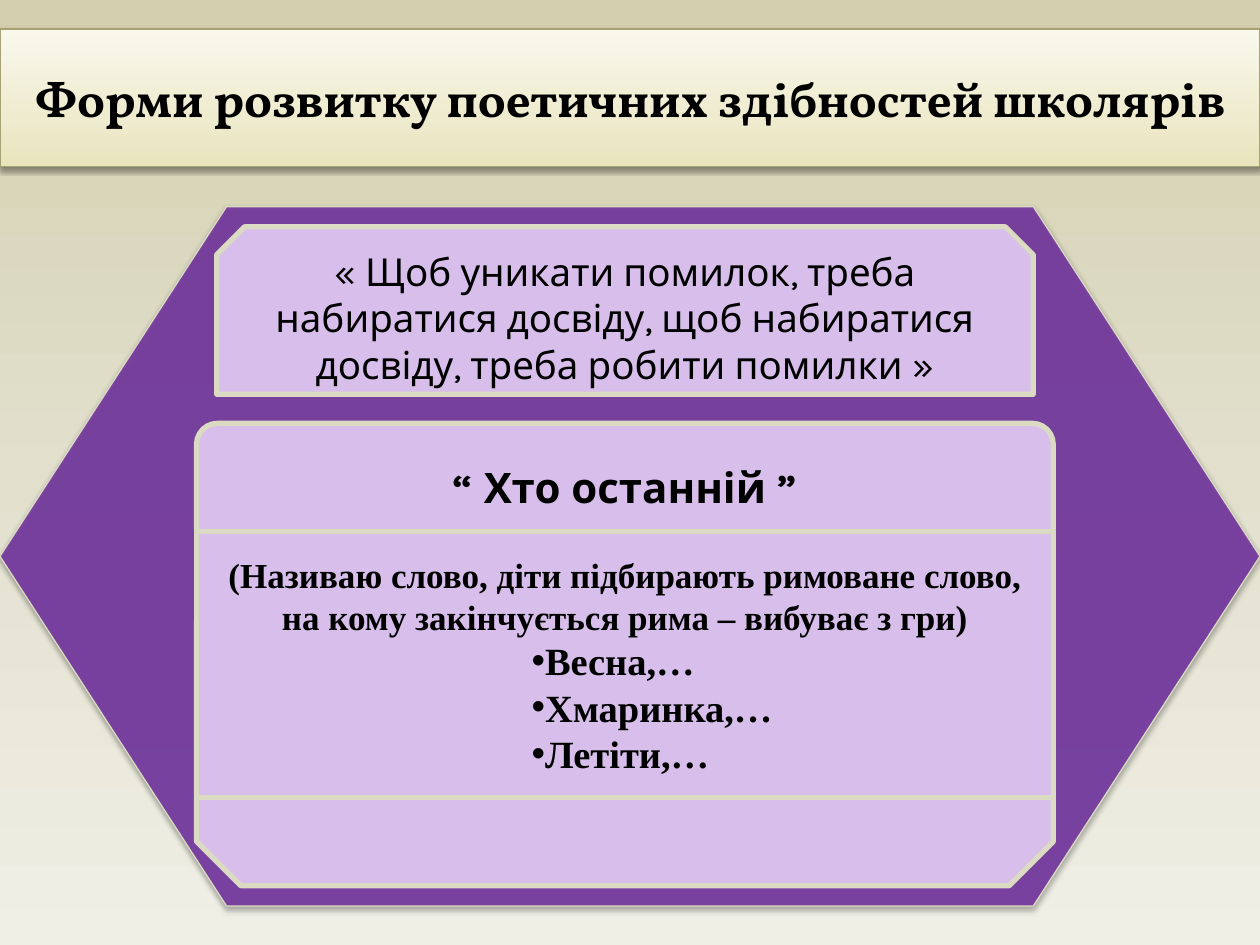
"""Build a slide on ways to develop pupils' poetic abilities."""
from copy import deepcopy
from dataclasses import dataclass

from lxml import etree
from pptx import Presentation
from pptx.dml.color import RGBColor
from pptx.enum.shapes import MSO_SHAPE
from pptx.enum.text import MSO_ANCHOR, MSO_AUTO_SIZE, PP_ALIGN
from pptx.oxml.ns import qn
from pptx.util import Inches, Pt

HEXAGON = MSO_SHAPE.HEXAGON
SNIPPED = MSO_SHAPE.SNIP_2_SAME_RECTANGLE
ROUNDED = MSO_SHAPE.ROUNDED_RECTANGLE
CENTER, LEFT = PP_ALIGN.CENTER, PP_ALIGN.LEFT
MIDDLE = MSO_ANCHOR.MIDDLE
NO_AUTOFIT = MSO_AUTO_SIZE.NONE
LILAC, PURPLE, EDGE, BLACK = "D8BFEB", "7030A0", "DBDAC2", "000000"


@dataclass
class Panel:
    kind: int
    box: tuple[float, float, float, float]
    text: str = ""
    size: int = 0
    bold: bool = False
    rotation: int = 0


PANELS = [
    Panel(SNIPPED, (1.72, 1.8, 6.48, 1.33),
          "« Щоб уникати помилок, треба набиратися досвіду, "
          "щоб набиратися досвіду, треба робити помилки »", 22),
    Panel(ROUNDED, (1.56, 3.36, 6.8, 1), "“ Хто останній ”", 24, bold=True),
    Panel(SNIPPED, (1.56, 4.92, 6.8, 2.11), rotation=180),
]
RULE = ("(Називаю слово, діти підбирають римоване слово, "
        "на кому закінчується рима – вибуває з гри)")
WORDS = ["Весна,…", "Хмаринка,…", "Летіти,…"]


def rgb(value: str) -> RGBColor:
    return RGBColor.from_string(value)


def set_gradient(fill, root, stops: list[tuple[float, str]], angle: int) -> None:
    fill.gradient()
    fill.gradient_angle = angle
    stop_list = root.find(".//" + qn("a:gsLst"))
    stop_list.append(deepcopy(stop_list[-1]))
    for stop, (position, color) in zip(fill.gradient_stops, stops):
        stop.position = position
        stop.color.rgb = rgb(color)


def set_line(sp, color: str, width: float) -> None:
    sp.line.color.rgb = rgb(color)
    sp.line.width = Pt(width)


def add_alpha(parent, percent: int) -> None:
    etree.SubElement(parent, qn("a:alpha"), val=str(percent * 1000))


def add_shadow(sp, opacity: int, distance: float) -> None:
    sp.shadow.inherit = False
    effects = sp._element.spPr.find(qn("a:effectLst"))
    outer = etree.SubElement(effects, qn("a:outerShdw"), blurRad=str(Pt(3.1)),
                             dist=str(Pt(distance)), dir="5400000", rotWithShape="0")
    add_alpha(etree.SubElement(outer, qn("a:srgbClr"), val=BLACK), opacity)


def place(sp, box: tuple[float, float, float, float]) -> None:
    sp.left, sp.top, sp.width, sp.height = map(Inches, box)


def prepare_text(sp) -> None:
    tf = sp.text_frame
    tf.word_wrap = True
    tf.auto_size = NO_AUTOFIT
    tf.vertical_anchor = MIDDLE


def add_run(p, text: str, font: str, size: int, bold: bool) -> None:
    r = p.add_run()
    r.text = text
    r.font.name = font
    r.font.size = Pt(size)
    r.font.bold = bold
    r.font.color.rgb = rgb(BLACK)


def add_filled(s, kind: int, box: tuple[float, float, float, float], color: str, width: float):
    sp = s.shapes.add_shape(kind, *map(Inches, box))
    sp.shadow.inherit = False
    sp.fill.solid()
    sp.fill.fore_color.rgb = rgb(color)
    set_line(sp, EDGE, width)
    return sp


def add_panel(s, panel: Panel) -> None:
    sp = add_filled(s, panel.kind, panel.box, LILAC, 3)
    sp.rotation = panel.rotation
    if panel.text:
        prepare_text(sp)
        p = sp.text_frame.paragraphs[0]
        p.alignment = CENTER
        add_run(p, panel.text, "Karla", panel.size, panel.bold)


def format_item(p, margin: float, indent: float, bullet: str = "") -> None:
    p.space_before = Pt(0)
    pPr = p._p.get_or_add_pPr()
    pPr.set("marL", str(Inches(margin)))
    pPr.set("indent", str(Inches(indent)))
    if bullet:
        etree.SubElement(pPr, qn("a:buChar"), char=bullet)
    else:
        etree.SubElement(pPr, qn("a:buNone"))


def fill_title(title) -> None:
    place(title, (0, 0.23, 10, 1.09))
    set_gradient(title.fill, title._element,
                 [(0, "E9E4BB"), (0.35, "EFEBCF"), (1, "F9F8EC")], 90)
    set_line(title, "A7A274", 0.75)
    add_shadow(title, 38, 1.6)
    prepare_text(title)
    p = title.text_frame.paragraphs[0]
    p.alignment = CENTER
    add_run(p, "Форми розвитку поетичних здібностей школярів", "Vollkorn", 28, True)


def fill_body(body) -> None:
    place(body, (1.56, 4.22, 6.8, 2.11))
    body.fill.solid()
    body.fill.fore_color.rgb = rgb(LILAC)
    set_line(body, EDGE, 3)
    prepare_text(body)
    tf = body.text_frame
    p = tf.paragraphs[0]
    p.alignment = CENTER
    format_item(p, 0, 0)
    add_run(p, RULE, "Times New Roman", 20, True)
    for word in WORDS:
        p = tf.add_paragraph()
        p.alignment = LEFT
        format_item(p, 2.16, 0.4, "•")
        add_run(p, word, "Times New Roman", 22, True)


def main() -> None:
    prs = Presentation()
    prs.slide_width, prs.slide_height = Inches(10), Inches(7.5)
    s = prs.slides.add_slide(prs.slide_layouts[1])
    set_gradient(s.background.fill, s._element,
                 [(0, "D3CFAE"), (0.5, "E2E0CD"), (1, "F0EFE6")], 270)
    fill_title(s.shapes.title)

    hexagon = add_filled(s, HEXAGON, (0, 1.64, 10, 5.55), PURPLE, 0.75)
    hexagon.adjustments[0] = 0.324
    add_alpha(hexagon._element.spPr.find(qn("a:solidFill"))[0], 85)
    add_shadow(hexagon, 35, 1.8)

    for panel in PANELS:
        add_panel(s, panel)
    body = s.placeholders[1]
    fill_body(body)
    s.shapes._spTree.append(body._element)
    prs.save("out.pptx")


if __name__ == "__main__":
    main()
